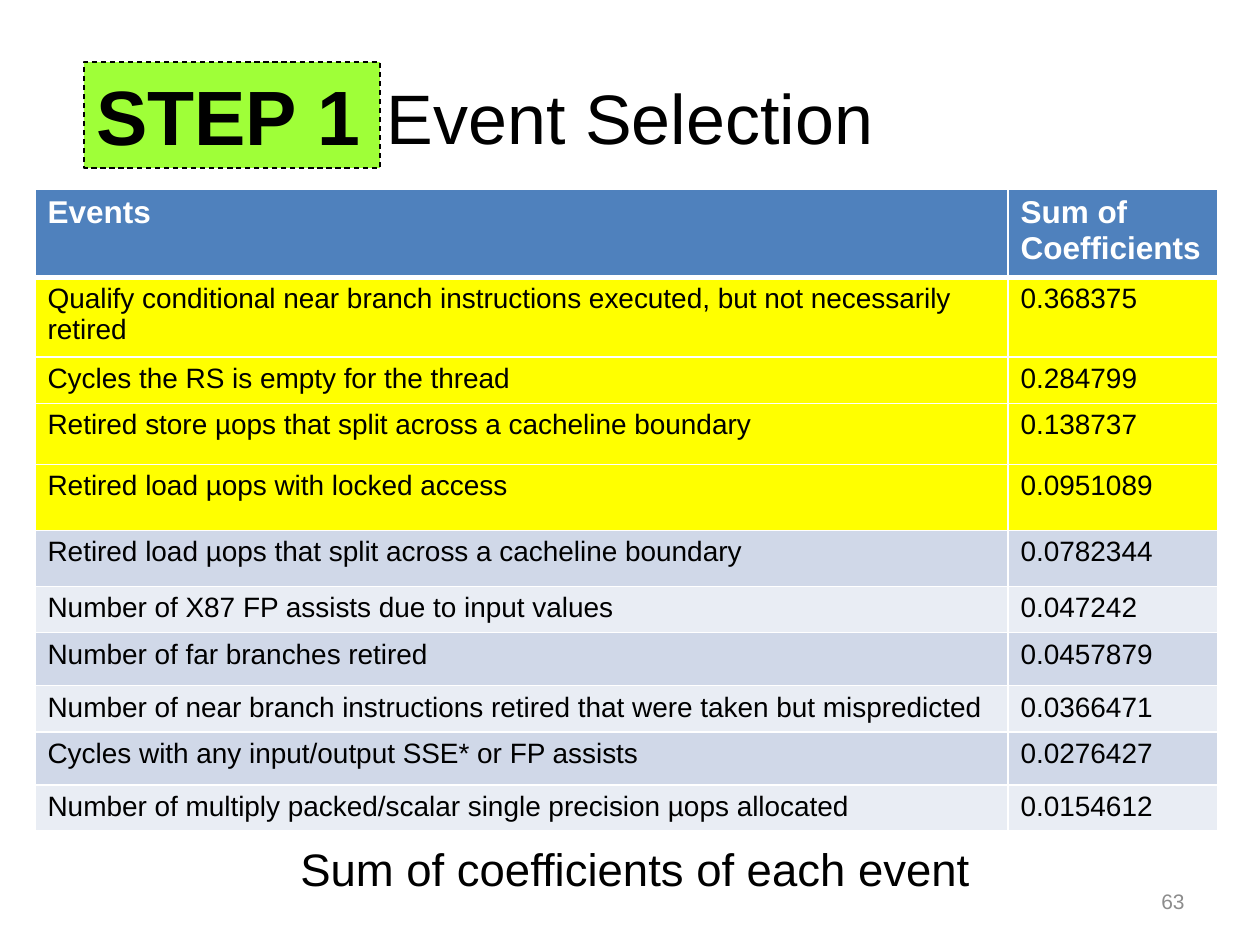
from pptx import Presentation
from pptx.dml.color import RGBColor as RGB
from pptx.enum.dml import MSO_LINE as DASH
from pptx.enum.shapes import MSO_SHAPE as SHAPE
from pptx.enum.text import MSO_ANCHOR as ANCHOR, PP_ALIGN as ALIGN
from pptx.oxml import parse_xml
from pptx.oxml.ns import nsdecls
from pptx.util import Pt

BLACK = RGB(0, 0, 0)
WHITE = RGB(255, 255, 255)
GRAY = RGB(0x8C, 0x8C, 0x8C)
LIME = RGB(0x9F, 0xFF, 0x38)
BLUE = RGB(0x4F, 0x81, 0xBD)
YELLOW = RGB(255, 255, 0)
BANDS = RGB(0xE9, 0xED, 0xF4), RGB(0xD0, 0xD8, 0xE8)

HEAD = ("Events", "Sum of Coefficients", 87)
EVENTS = [
    ("Qualify conditional near branch instructions executed, but not necessarily retired", "0.368375", 80),
    ("Cycles the RS is empty for the thread", "0.284799", 46),
    ("Retired store µops that split across a cacheline boundary", "0.138737", 61),
    ("Retired load µops with locked access", "0.0951089", 66),
    ("Retired load µops that split across a cacheline boundary", "0.0782344", 56),
    ("Number of X87 FP assists due to input values", "0.047242", 46),
    ("Number of far branches retired", "0.0457879", 53),
    ("Number of near branch instructions retired that were taken but mispredicted", "0.0366471", 46),
    ("Cycles with any input/output SSE* or FP assists", "0.0276427", 53),
    ("Number of multiply packed/scalar single precision µops allocated", "0.0154612", 46),
]
PICKED = 4
COLS = 973, 210
TEXTS = [
    ("Event Selection", (63, 38, 1134, 157), 40, BLACK, ALIGN.CENTER, ANCHOR.MIDDLE),
    ("Sum of coefficients of each event", (42, 835, 1187, 68), 26, BLACK, ALIGN.CENTER, ANCHOR.TOP),
    ("63", (903, 876, 294, 50), 12, GRAY, ALIGN.RIGHT, ANCHOR.MIDDLE),
]


def px(n):
    return round(n * 914400 / 126)


def write(frame, text, size, color, bold=False, align=ALIGN.LEFT):
    frame.word_wrap = True
    par = frame.paragraphs[0]
    par.text = text
    par.alignment = align
    font = par.font
    font.name, font.size, font.bold = "Arial", Pt(size), bold
    font.color.rgb = color


def border(cell, top, bottom):
    props = cell._tc.get_or_add_tcPr()
    sides = ("L", 1), ("R", 1), ("T", top), ("B", bottom)
    for spot, (side, width) in enumerate(sides):
        props.insert(spot, parse_xml(
            f'<a:ln{side} {nsdecls("a")} w="{Pt(width)}"><a:solidFill>'
            f'<a:srgbClr val="{WHITE}"/></a:solidFill></a:ln{side}>'))


def shade(row):
    if row == 0:
        return BLUE
    return YELLOW if row <= PICKED else BANDS[row % 2]


def main():
    deck = Presentation()
    deck.slide_width, deck.slide_height = px(1260), px(945)
    shapes = deck.slides.add_slide(deck.slide_layouts[6]).shapes

    for text, spot, size, color, align, anchor in TEXTS:
        frame = shapes.add_textbox(*map(px, spot)).text_frame
        frame.vertical_anchor = anchor
        write(frame, text, size, color, align=align)

    step = shapes.add_shape(SHAPE.RECTANGLE, *map(px, (84, 62, 296, 106)))
    step.shadow.inherit = False
    step.fill.solid()
    step.fill.fore_color.rgb = LIME
    step.line.color.rgb = BLACK
    step.line.width = Pt(0.75)
    step.line.dash_style = DASH.DASH
    step.text_frame.vertical_anchor = ANCHOR.TOP
    write(step.text_frame, "STEP 1", 44, BLACK, True)

    rows = [HEAD] + EVENTS
    high = sum(row[-1] for row in rows)
    spot = map(px, (35, 189, sum(COLS), high))
    table = shapes.add_table(len(rows), len(COLS), *spot).table
    for col, width in zip(table.columns, COLS):
        col.width = px(width)
    for r, (*texts, height) in enumerate(rows):
        table.rows[r].height = px(height)
        head = r == 0
        for c, text in enumerate(texts):
            cell = table.cell(r, c)
            cell.fill.solid()
            cell.fill.fore_color.rgb = shade(r)
            border(cell, 3 if r == 1 else 1, 3 if head else 1)
            write(cell.text_frame, text, 18 if head else 16, WHITE if head else BLACK, head)

    deck.save("out.pptx")


if __name__ == "__main__":
    main()
